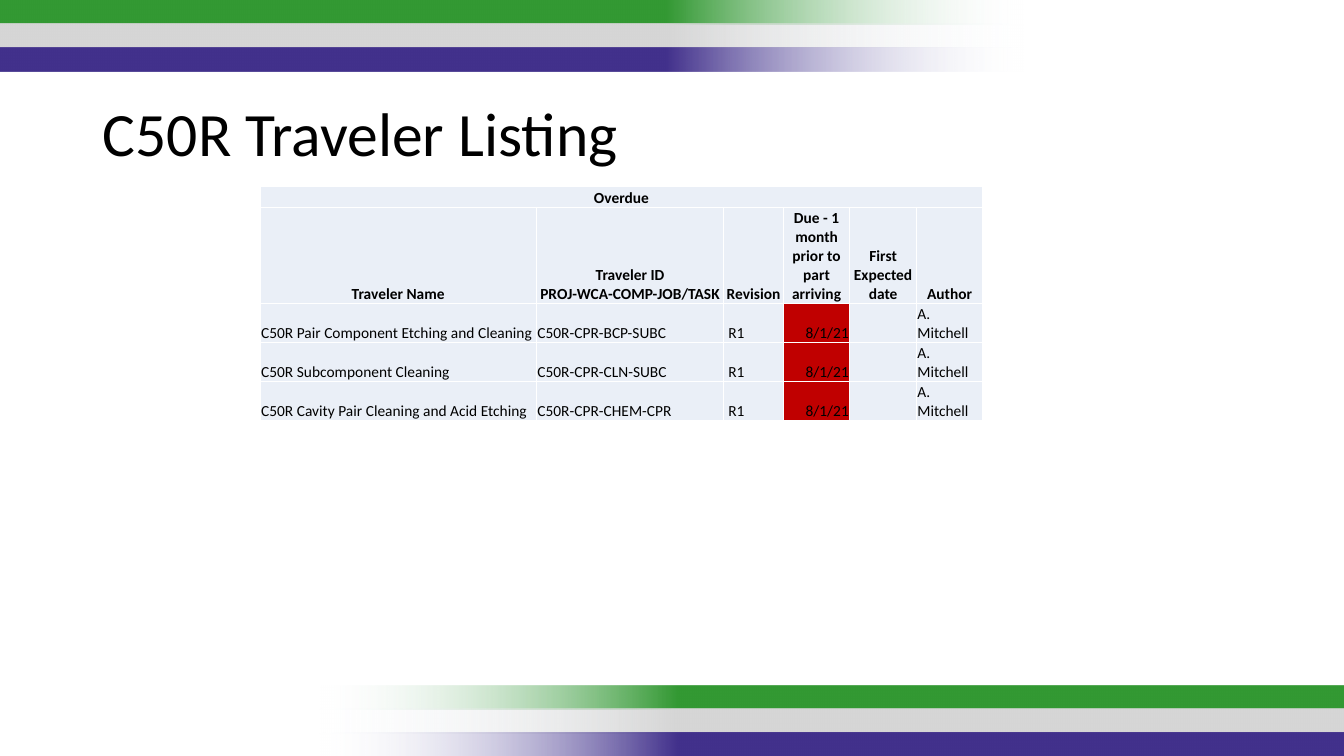
from lxml.etree import SubElement
from pptx import Presentation
from pptx.dml.color import RGBColor
from pptx.enum.shapes import MSO_SHAPE
from pptx.enum.text import MSO_ANCHOR, PP_ALIGN
from pptx.oxml.ns import qn
from pptx.util import Inches, Pt

TITLE = "C50R Traveler Listing"
BANNER = "Overdue"
HEADERS = ["Traveler Name", "Traveler ID\vPROJ-WCA-COMP-JOB/TASK", "Revision",
           "Due - 1 month prior to part arriving", "First Expected date", "Author"]
TRAVELERS = [
    ("C50R Pair Component Etching and Cleaning", "C50R-CPR-BCP-SUBC"),
    ("C50R Subcomponent Cleaning", "C50R-CPR-CLN-SUBC"),
    ("C50R Cavity Pair Cleaning and Acid Etching", "C50R-CPR-CHEM-CPR"),
]
REVISION, DUE, EXPECTED, AUTHOR = " R1", "8/1/21", "", "A. Mitchell"

FONT = "Calibri"
BLACK = RGBColor(0x00, 0x00, 0x00)
WHITE = RGBColor(0xFF, 0xFF, 0xFF)
PALE = RGBColor(0xEA, 0xEF, 0xF7)
RED = RGBColor(0xC0, 0x00, 0x00)
FADE = RGBColor(0xF7, 0xFA, 0xFD)
GREEN = RGBColor(0x33, 0x99, 0x33)
GREY = RGBColor(0xD6, 0xD6, 0xD6)
PURPLE = RGBColor(0x42, 0x31, 0x8C)

SLIDE_W, SLIDE_H = 13.33, 7.5
BAR_W, BAR_H, BAR_STEP = 10.17, 0.24, 0.235
COL_WIDTHS = [2.74, 1.86, 0.59, 0.66, 0.66, 0.66]
ROW_H = 0.21
DUE_COL = 3


def add_bar(s, left, top, color, rotation):
    """Add a stripe that fades from clear at its start to solid color."""
    bar = s.shapes.add_shape(MSO_SHAPE.RECTANGLE, Inches(left), Inches(top),
                             Inches(BAR_W), Inches(BAR_H))
    bar.shadow.inherit = False
    bar.rotation = rotation
    bar.line.fill.background()
    bar.fill.gradient()
    bar.fill.gradient_angle = 0
    stops = bar.fill._fill._gradFill.find(qn("a:gsLst"))
    for stop in list(stops):
        stops.remove(stop)
    for pos, rgb in ((0, FADE), (35, color), (100, color)):
        stop = SubElement(stops, qn("a:gs"), pos=str(pos * 1000))
        clr = SubElement(stop, qn("a:srgbClr"), val=str(rgb))
        if pos == 0:
            SubElement(clr, qn("a:alpha"), val="0")


def add_borders(cell):
    tc_pr = cell._tc.get_or_add_tcPr()
    for side in ("a:lnL", "a:lnR", "a:lnT", "a:lnB"):
        ln = SubElement(tc_pr, qn(side), w=str(Pt(1)))
        fill = SubElement(ln, qn("a:solidFill"))
        SubElement(fill, qn("a:srgbClr"), val=str(WHITE))


def style_font(font, size, bold=False):
    font.name, font.size, font.bold = FONT, Pt(size), bold
    font.color.rgb = BLACK


def fill_cell(cell, text, align, bold, color):
    add_borders(cell)
    cell.fill.solid()
    cell.fill.fore_color.rgb = color
    cell.margin_left = cell.margin_right = cell.margin_top = Inches(0.01)
    cell.margin_bottom = 0
    cell.vertical_anchor = MSO_ANCHOR.BOTTOM
    cell.text = text
    p = cell.text_frame.paragraphs[0]
    p.alignment = align
    for r in p.runs:
        style_font(r.font, 11, bold)


def add_traveler_table(s):
    rows = [[BANNER] + [""] * (len(HEADERS) - 1), HEADERS]
    rows += [[*t, REVISION, DUE, EXPECTED, AUTHOR] for t in TRAVELERS]
    table = s.shapes.add_table(len(rows), len(HEADERS), Inches(2.58), Inches(1.85),
                               Inches(sum(COL_WIDTHS)), Inches(ROW_H * len(rows))).table
    table.first_row = table.horz_banding = False
    for col, width in zip(table.columns, COL_WIDTHS):
        col.width = Inches(width)
    for i, row in enumerate(rows):
        table.rows[i].height = Inches(ROW_H)
        heading = i < 2
        for j, text in enumerate(row):
            due = j == DUE_COL and not heading
            align = PP_ALIGN.CENTER if heading else PP_ALIGN.RIGHT if due else PP_ALIGN.LEFT
            fill_cell(table.cell(i, j), text, align, heading, RED if due else PALE)
    table.cell(0, 0).merge(table.cell(0, len(HEADERS) - 1))


def main():
    prs = Presentation()
    prs.slide_width, prs.slide_height = Inches(SLIDE_W), Inches(SLIDE_H)
    s = prs.slides.add_slide(prs.slide_layouts[5])

    for i, color in enumerate((GREEN, GREY, PURPLE)):
        add_bar(s, -0.01, i * BAR_STEP, color, 180)
        add_bar(s, SLIDE_W - BAR_W + 0.01, 6.8 + i * BAR_STEP, color, 0)

    title = s.shapes.title
    title.left, title.top = Inches(0.92), Inches(0.86)
    title.width, title.height = Inches(11.5), Inches(0.99)
    tf = title.text_frame
    tf.text = TITLE
    tf.vertical_anchor = MSO_ANCHOR.MIDDLE
    p = tf.paragraphs[0]
    p.alignment = PP_ALIGN.LEFT
    p.line_spacing = 0.9
    style_font(p.runs[0].font, 44)

    add_traveler_table(s)
    prs.save("out.pptx")


if __name__ == "__main__":
    main()
